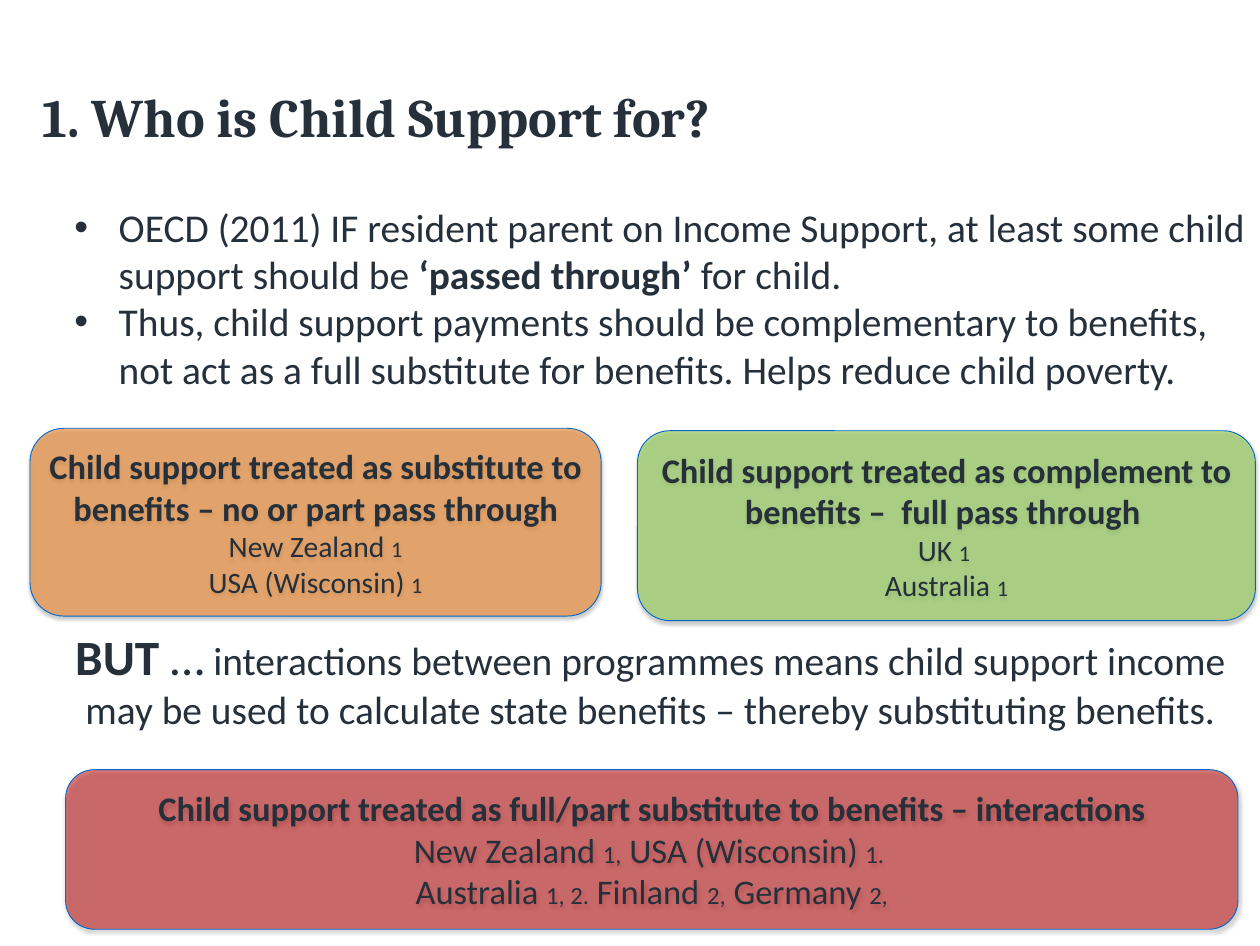
from lxml.etree import SubElement
from pptx import Presentation
from pptx.dml.color import RGBColor
from pptx.enum.shapes import MSO_SHAPE as Shape
from pptx.enum.text import MSO_ANCHOR as Anchor, PP_ALIGN as Align
from pptx.oxml.ns import qn
from pptx.util import Cm, Pt

# Content: each paragraph is a list of (text, size, bold) runs
SLIDE_SIZE = (36.09, 27.1)
INK, OUTLINE = "25303B", "0066CC"

TITLE = [[("1. Who is Child Support for?", 44, True)]]
POINTS = [
    [("OECD (2011) IF resident parent on Income Support, at least some child "
      "support should be ", 32, False),
     ("‘passed through’ ", 32, True),
     ("for child.", 32, False)],
    [("Thus, child support payments should be complementary to benefits, not act "
      "as a full substitute for benefits. Helps reduce child poverty.", 32, False)],
]
BUT = [[
    ("BUT ", 40, True),
    ("…", 40, False),
    (" interactions between programmes means child support income may be used to "
     "calculate state benefits – thereby substituting benefits.", 32, False),
]]

# Panels: place in cm, corner ratio, fill, opacity in percent, paragraphs
PANELS = [
    ((0.86, 12.27, 16.36, 5.38), 0.18, "F18626", 58, [
        [("Child support treated as substitute to benefits – no or part pass through",
          28, True)],
        [("New Zealand ", 24, False), ("1", 18, False)],
        [("USA (Wisconsin) ", 24, False), ("1", 18, False)],
    ]),
    ((18.26, 12.34, 17.7, 5.44), 0.17, "92D050", 58, [
        [("Child support treated as complement to benefits –  full pass through ",
          28, True)],
        [("UK ", 24, False), ("1 ", 18, False)],
        [("Australia ", 24, False), ("1", 18, False)],
    ]),
    ((1.88, 22.05, 33.58, 4.57), 0.18, "C00000", 50, [
        [("Child support treated as full/part substitute to benefits – interactions",
          28, True)],
        [("New Zealand ", 28, False), ("1,", 20, False),
         (" USA (Wisconsin) ", 28, False), ("1. ", 20, False)],
        [("Australia ", 28, False), ("1, 2.", 20, False), (" Finland ", 28, False),
         ("2,", 20, False), (" Germany ", 28, False), ("2,", 20, False)],
    ]),
]


def color(value):
    return RGBColor.from_string(value)


def set_bullet(para, indent):
    props = para._p.get_or_add_pPr()
    props.set("marL", str(indent))
    props.set("indent", str(-indent))
    SubElement(props, qn("a:buFont"), typeface="Arial")
    SubElement(props, qn("a:buChar"), char="•")


def write(frame, paragraphs, font="Calibri", align=Align.CENTER, bullets=False):
    frame.word_wrap = True
    for index, runs in enumerate(paragraphs):
        para = frame.paragraphs[0] if index == 0 else frame.add_paragraph()
        para.alignment = align
        if bullets:
            set_bullet(para, Cm(1.27))
        for text, size, bold in runs:
            span = para.add_run()
            span.text = text
            span.font.name = font
            span.font.size = Pt(size)
            span.font.bold = bold
            span.font.color.rgb = color(INK)


def add_text(page, place, paragraphs, **style):
    box = page.shapes.add_textbox(*map(Cm, place))
    write(box.text_frame, paragraphs, **style)
    return box.text_frame


def add_shadow(shape):
    effects = shape._element.spPr.find(qn("a:effectLst"))
    shadow = SubElement(effects, qn("a:outerShdw"), blurRad=str(Pt(3.1)),
                        dist=str(Pt(1.8)), dir="5400000", rotWithShape="0")
    tint = SubElement(shadow, qn("a:srgbClr"), val="000000")
    SubElement(tint, qn("a:alpha"), val="35000")


def add_panel(page, place, corner, fill, opacity, paragraphs):
    panel = page.shapes.add_shape(Shape.ROUNDED_RECTANGLE, *map(Cm, place))
    panel.adjustments[0] = corner
    panel.fill.solid()
    panel.fill.fore_color.rgb = color(fill)
    tint = panel._element.spPr.find(qn("a:solidFill"))[0]
    SubElement(tint, qn("a:alpha"), val=str(opacity * 1000))
    panel.line.color.rgb = color(OUTLINE)
    panel.line.width = Pt(0.75)
    panel.shadow.inherit = False
    add_shadow(panel)
    panel.text_frame.vertical_anchor = Anchor.MIDDLE
    write(panel.text_frame, paragraphs)


def main():
    deck = Presentation()
    deck.slide_width, deck.slide_height = map(Cm, SLIDE_SIZE)
    page = deck.slides.add_slide(deck.slide_layouts[6])

    # Heading
    title = add_text(page, (0.86, 1.37, 25.7, 3.89), TITLE,
                     font="Cambria", align=Align.LEFT)
    title.vertical_anchor = Anchor.MIDDLE
    title.margin_left = title.margin_right = Cm(0.36)
    title.margin_top = title.margin_bottom = Cm(0.18)

    # Argument and panels
    add_text(page, (1.88, 5.69, 34.21, 5.74), POINTS, align=Align.LEFT, bullets=True)
    for panel in PANELS:
        add_panel(page, *panel)
    add_text(page, (1.35, 17.81, 34.59, 3.33), BUT)

    deck.save("out.pptx")


if __name__ == "__main__":
    main()
